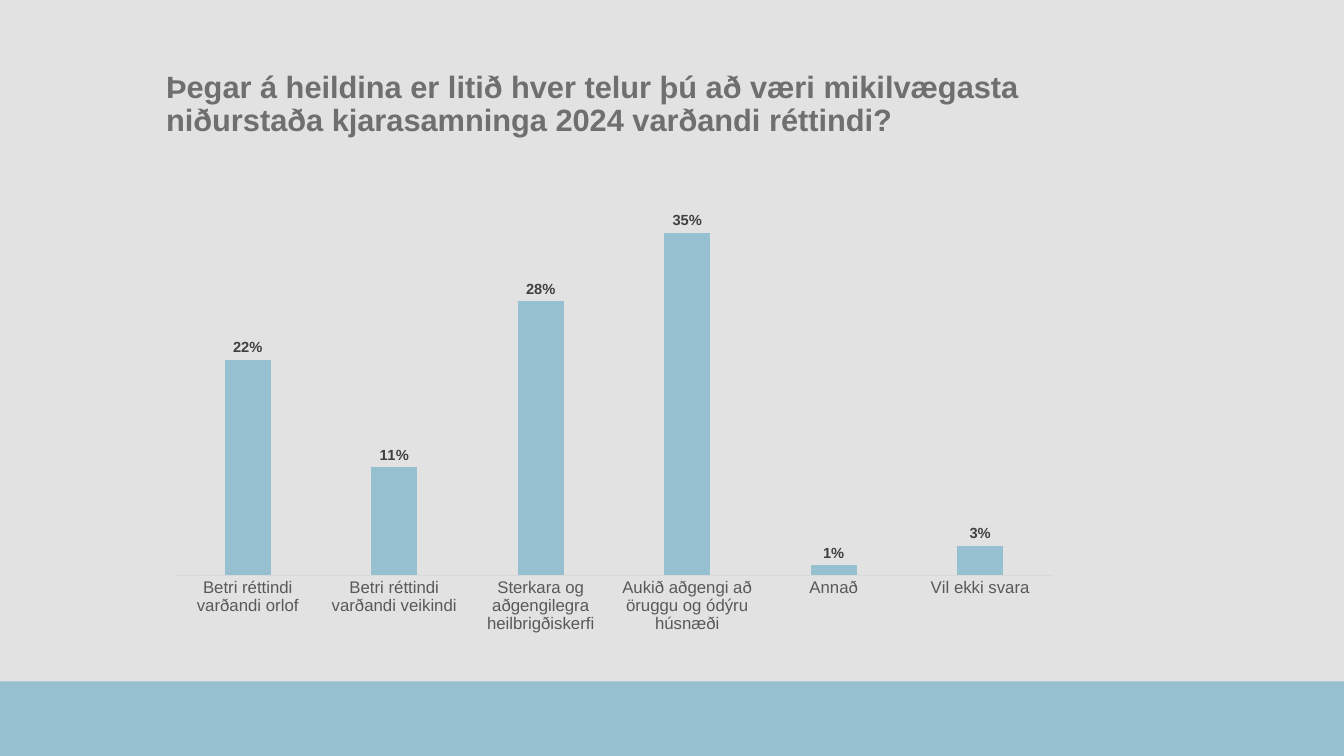
from dataclasses import dataclass

import pptx
import pptx.chart.data
import pptx.dml.color
import pptx.enum.chart
import pptx.enum.shapes
import pptx.enum.text
import pptx.util

Inches = pptx.util.Inches
FONT = "Arial"
COLORS = {
    "back": "E2E2E2",
    "blue": "96C0CF",
    "title": "706F6F",
    "label": "404040",
    "axis": "595959",
    "line": "D9D9D9",
}
TITLE = (
    "Þegar á heildina er litið hver telur þú að væri mikilvægasta "
    "niðurstaða kjarasamninga 2024 varðandi réttindi?"
)


@dataclass
class Answer:
    name: str
    share: float


ANSWERS = [
    Answer("Betri réttindi varðandi orlof", 0.22),
    Answer("Betri réttindi varðandi veikindi", 0.11),
    Answer("Sterkara og aðgengilegra heilbrigðiskerfi", 0.28),
    Answer("Aukið aðgengi að öruggu og ódýru húsnæði", 0.35),
    Answer("Annað", 0.01),
    Answer("Vil ekki svara", 0.03),
]


def color(key: str) -> pptx.dml.color.RGBColor:
    return pptx.dml.color.RGBColor.from_string(COLORS[key])


def paint(fill, key: str) -> None:
    fill.solid()
    fill.fore_color.rgb = color(key)


def style(font, size: float, key: str, bold: bool = False) -> None:
    font.name = FONT
    font.size = pptx.util.Pt(size)
    font.bold = bold
    font.color.rgb = color(key)


def add_band(slide) -> None:
    band = slide.shapes.add_shape(
        pptx.enum.shapes.MSO_SHAPE.RECTANGLE,
        Inches(0), Inches(6.76), Inches(13.33), Inches(0.74),
    )
    band.shadow.inherit = False
    paint(band.fill, "blue")
    band.line.fill.background()


def add_title(slide) -> None:
    box = slide.shapes.add_textbox(
        Inches(1.55), Inches(0.7), Inches(10.24), Inches(0.68)
    )
    frame = box.text_frame
    frame.word_wrap = True
    frame.vertical_anchor = pptx.enum.text.MSO_ANCHOR.MIDDLE
    para = frame.paragraphs[0]
    para.line_spacing = 0.9
    run = para.add_run()
    run.text = TITLE
    style(run.font, 22, "title", bold=True)


def add_chart(slide, answers: list[Answer]) -> None:
    data = pptx.chart.data.CategoryChartData(number_format="0%")
    data.categories = [answer.name for answer in answers]
    data.add_series("Series 1", [answer.share for answer in answers])
    chart = slide.shapes.add_chart(
        pptx.enum.chart.XL_CHART_TYPE.COLUMN_CLUSTERED,
        Inches(1.55), Inches(1.73), Inches(9.08), Inches(4.64), data,
    ).chart
    chart.has_legend = False
    chart.has_title = False
    chart.font.name = FONT
    chart.font.size = pptx.util.Pt(10)

    # Columns and their labels
    plot = chart.plots[0]
    plot.gap_width = 219
    plot.overlap = -27
    plot.vary_by_categories = False
    series = plot.series[0]
    paint(series.format.fill, "blue")
    labels = series.data_labels
    labels.show_value = True
    labels.number_format = "0%"
    labels.number_format_is_linked = False
    labels.position = pptx.enum.chart.XL_LABEL_POSITION.OUTSIDE_END
    style(labels.font, 10.5, "label", bold=True)

    # Axes
    base = chart.category_axis
    base.major_tick_mark = pptx.enum.chart.XL_TICK_MARK.NONE
    base.format.line.color.rgb = color("line")
    base.format.line.width = pptx.util.Pt(0.75)
    style(base.tick_labels.font, 12, "axis")
    scale = chart.value_axis
    scale.visible = False
    scale.has_major_gridlines = False
    scale.minimum_scale = 0
    scale.maximum_scale = 0.4


def main() -> None:
    deck = pptx.Presentation()
    deck.slide_width = Inches(13.33)
    deck.slide_height = Inches(7.5)
    slide = deck.slides.add_slide(deck.slide_layouts[6])
    paint(slide.background.fill, "back")
    add_band(slide)
    add_title(slide)
    add_chart(slide, ANSWERS)
    deck.save("out.pptx")


if __name__ == "__main__":
    main()
